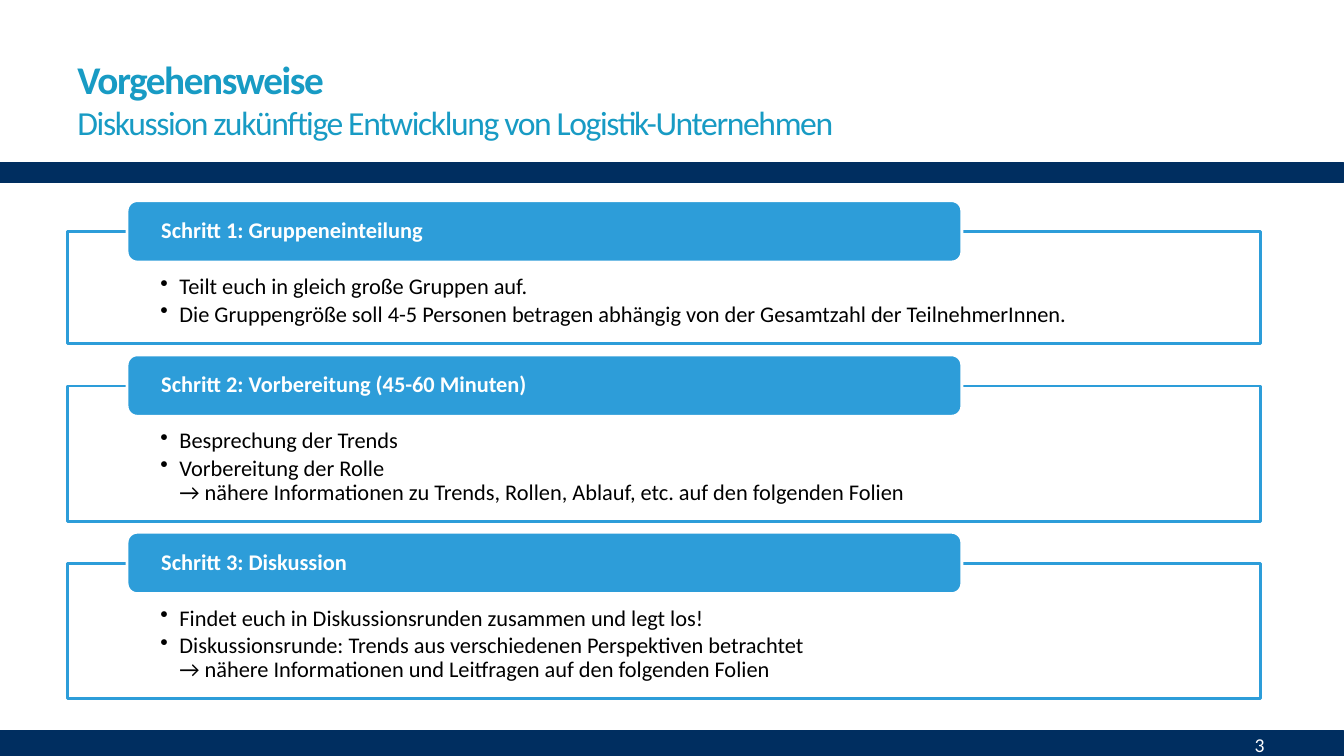
from dataclasses import dataclass

from lxml.etree import SubElement
from pptx import Presentation
from pptx.dml.color import RGBColor
from pptx.enum.shapes import MSO_SHAPE as Shape
from pptx.enum.text import MSO_ANCHOR as Anchor, PP_ALIGN as Align
from pptx.oxml.ns import qn
from pptx.util import Inches, Pt


@dataclass(frozen=True)
class Theme:
    font: str = "Calibri"
    navy: RGBColor = RGBColor(0x00, 0x2E, 0x60)
    teal: RGBColor = RGBColor(0x18, 0x9B, 0xC4)
    blue: RGBColor = RGBColor(0x2D, 0x9D, 0xD9)
    white: RGBColor = RGBColor(0xFF, 0xFF, 0xFF)
    black: RGBColor = RGBColor(0x00, 0x00, 0x00)
    title: Pt = Pt(28)
    subtitle: Pt = Pt(24)
    body: Pt = Pt(16)
    number: Pt = Pt(14)
    line: Pt = Pt(2.08)


theme = Theme()
presentation = Presentation()
presentation.slide_width = Inches(13.33)
presentation.slide_height = Inches(7.5)
slide = presentation.slides.add_slide(presentation.slide_layouts[6])


def add_box(kind, left, top, width, height, fill, line):
    shape = slide.shapes.add_shape(
        kind, Inches(left), Inches(top), Inches(width), Inches(height))
    shape.shadow.inherit = False
    shape.fill.solid()
    shape.fill.fore_color.rgb = fill
    shape.line.color.rgb = line
    shape.line.width = theme.line
    shape.text_frame.word_wrap = True
    return shape


def set_font(font, size, color, bold=False):
    font.name = theme.font
    font.size = size
    font.color.rgb = color
    font.bold = bold


for top, height in [(1.62, 0.18), (7.26, 0.24)]:
    add_box(Shape.RECTANGLE, 0, top, 13.33, height, theme.navy, theme.navy)

title = slide.shapes.add_textbox(Inches(0.67), Inches(0.44), Inches(8.98), Inches(1.08))
title.text_frame.word_wrap = True
title.text_frame.vertical_anchor = Anchor.MIDDLE
paragraph = title.text_frame.paragraphs[0]
heading = paragraph.add_run()
heading.text = "Vorgehensweise"
paragraph.add_line_break()
subheading = paragraph.add_run()
subheading.text = "Diskussion zukünftige Entwicklung von Logistik-Unternehmen"
for run, size, bold in [(heading, theme.title, True), (subheading, theme.subtitle, False)]:
    set_font(run.font, size, theme.teal, bold)
    run.font._element.set("spc", "-100")

number = slide.shapes.add_textbox(Inches(11.08), Inches(7.21), Inches(1.56), Inches(0.36))
number.text_frame.word_wrap = True
number.text_frame.vertical_anchor = Anchor.MIDDLE
paragraph = number.text_frame.paragraphs[0]
paragraph.text = "3"
paragraph.alignment = Align.RIGHT
set_font(paragraph.font, theme.number, theme.white)

steps = [
    ("Schritt 1: Gruppeneinteilung", 1.11, [
        "Teilt euch in gleich große Gruppen auf.",
        "Die Gruppengröße soll 4-5 Personen betragen abhängig von der "
        "Gesamtzahl der TeilnehmerInnen."]),
    ("Schritt 2: Vorbereitung (45-60 Minuten)", 1.34, [
        "Besprechung der Trends",
        "Vorbereitung der Rolle\v→ nähere Informationen zu Trends, Rollen, "
        "Ablauf, etc. auf den folgenden Folien"]),
    ("Schritt 3: Diskussion", 1.34, [
        "Findet euch in Diskussionsrunden zusammen und legt los!",
        "Diskussionsrunde: Trends aus verschiedenen Perspektiven betrachtet\v"
        "→ nähere Informationen und Leitfragen auf den folgenden Folien"]),
]
panel_top = 2.3
panel_gap = 0.42
header_rise = 0.31

for step, panel_height, points in steps:
    panel = add_box(Shape.RECTANGLE, 0.67, panel_top, 11.83, panel_height,
                    theme.white, theme.blue)
    frame = panel.text_frame
    frame.vertical_anchor = Anchor.TOP
    frame.margin_left = frame.margin_right = Inches(0.92)
    frame.margin_top = Inches(0.43)
    frame.margin_bottom = Inches(0.12)
    for index, point in enumerate(points):
        paragraph = frame.add_paragraph() if index else frame.paragraphs[0]
        paragraph.text = point
        paragraph.alignment = Align.LEFT
        paragraph.line_spacing = 0.9
        paragraph.space_after = Pt(2.4)
        properties = paragraph._p.get_or_add_pPr()
        properties.set("marL", str(Inches(0.19)))
        properties.set("indent", str(Inches(-0.19)))
        SubElement(properties, qn("a:buChar"), char="•")
        set_font(paragraph.font, theme.body, theme.black)

    header = add_box(Shape.ROUNDED_RECTANGLE, 1.26, panel_top - header_rise, 8.28, 0.61,
                     theme.blue, theme.white)
    frame = header.text_frame
    frame.vertical_anchor = Anchor.MIDDLE
    frame.margin_left = frame.margin_right = Inches(0.31)
    frame.margin_top = frame.margin_bottom = 0
    paragraph = frame.paragraphs[0]
    paragraph.text = step
    paragraph.alignment = Align.LEFT
    paragraph.line_spacing = 0.9
    set_font(paragraph.font, theme.body, theme.white, True)
    panel_top += panel_height + panel_gap

presentation.save("out.pptx")
